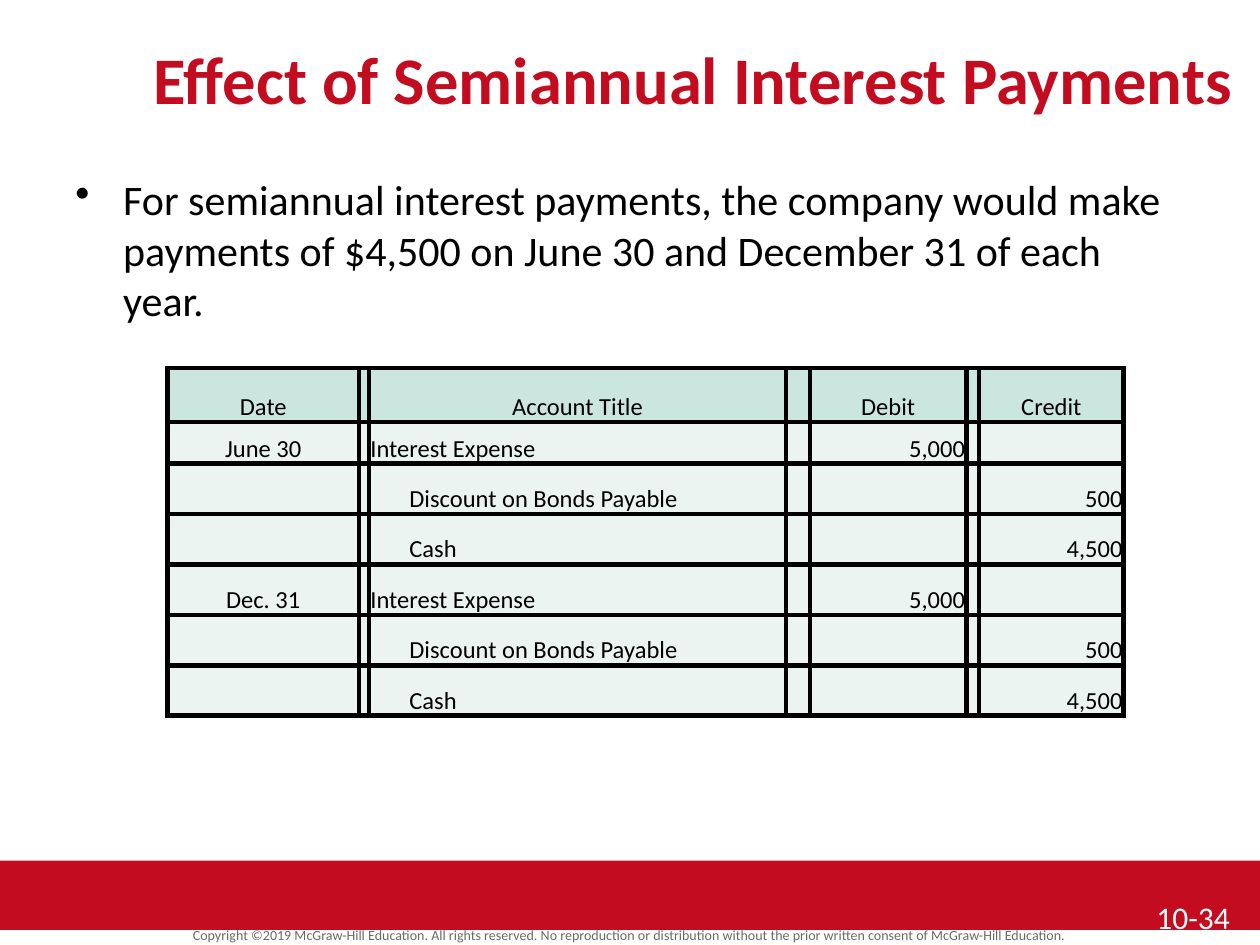
from lxml import etree
from pptx import Presentation, util as u
from pptx.dml.color import RGBColor
from pptx.enum import shapes, text
from pptx.oxml.ns import qn

RED, BLACK, WHITE, GRAY = "C30C20", "000000", "FFFFFF", "6A6A6A"
HEAD, BODY = "CAE6DE", "ECF4F1"
LEFT, MID, RIGHT = text.PP_ALIGN.LEFT, text.PP_ALIGN.CENTER, text.PP_ALIGN.RIGHT
COLS = [1.52, 0.08, 3.31, 0.19, 1.24, 0.1, 1.15]
ROWS = [0.43, 0.33] + [0.4] * 5
ALIGNS = [MID, LEFT, LEFT, LEFT, RIGHT, LEFT, RIGHT]


def color(code):
    return RGBColor.from_string(code)


def style(para, size, code, align=LEFT, bold=False):
    para.alignment = align
    font = para.font
    font.name, font.size, font.bold = "Calibri", u.Pt(size), bold
    font.color.rgb = color(code)


def label(slide, box, words, size, code, align=LEFT, bold=False):
    frame = slide.shapes.add_textbox(*map(u.Inches, box)).text_frame
    frame.word_wrap = True
    para = frame.paragraphs[0]
    para.text = words
    style(para, size, code, align, bold)
    return frame


def bullet(slide, box, words):
    para = label(slide, box, words, 24, BLACK).paragraphs[0]
    para.space_after = u.Pt(8)
    props = para._p.get_or_add_pPr()
    props.set("marL", str(u.Inches(0.38)))
    props.set("indent", str(u.Inches(-0.38)))
    mark = etree.Element(qn("a:buChar"), char="•")
    props.find(qn("a:defRPr")).addprevious(mark)


def footer(slide, box, note, page):
    left, top, width, height = box
    bar = slide.shapes.add_shape(shapes.MSO_SHAPE.RECTANGLE, *map(u.Inches, box))
    bar.shadow.inherit = False
    bar.fill.solid()
    bar.fill.fore_color.rgb = color(RED)
    bar.line.fill.background()
    frame = label(slide, (left, top + 0.51, width, 0.19), note, 8, GRAY, MID)
    frame.vertical_anchor = text.MSO_ANCHOR.MIDDLE
    frame.paragraphs[0].line_spacing = 0.8
    label(slide, (left + width - 0.92, top + 0.25, 0.92, 0.42), page, 18, WHITE)


def border(cell):
    props = cell._tc.get_or_add_tcPr()
    for spot, side in enumerate(("lnL", "lnR", "lnT", "lnB")):
        line = etree.Element(qn(f"a:{side}"), w=str(u.Pt(3)))
        fill = etree.SubElement(line, qn("a:solidFill"))
        etree.SubElement(fill, qn("a:srgbClr"), val=BLACK)
        props.insert(spot, line)


def paint(cell, words, align, back, inset):
    cell.margin_left = cell.margin_right = cell.margin_top = u.Inches(0.01)
    cell.margin_bottom = 0
    cell.vertical_anchor = text.MSO_ANCHOR.BOTTOM
    cell.fill.solid()
    cell.fill.fore_color.rgb = color(back)
    border(cell)
    para = cell.text_frame.paragraphs[0]
    para.text = words
    style(para, 14, BLACK, align)
    if inset:
        para._p.get_or_add_pPr().set("marL", str(u.Inches(inset)))


def journal(slide, box, rows):
    frame = slide.shapes.add_table(len(ROWS), len(COLS), *map(u.Inches, box))
    table = frame.table
    for col, width in zip(table.columns, COLS):
        col.width = u.Inches(width)
    for r, (row, height) in enumerate(zip(rows, ROWS)):
        table.rows[r].height = u.Inches(height)
        date, title, debit, credit = row
        for c, words in enumerate((date, "", title, "", debit, "", credit)):
            align = ALIGNS[c] if r else MID
            inset = 0.31 if c == 2 and not date else 0
            paint(table.cell(r, c), words, align, BODY if r else HEAD, inset)


def entry(date):
    return [
        (date, "Interest Expense", "5,000", ""),
        ("", "Discount on Bonds Payable", "", "500"),
        ("", "Cash", "", "4,500"),
    ]


def main():
    deck = Presentation()
    deck.slide_width, deck.slide_height = u.Inches(10), u.Inches(7.5)
    slide = deck.slides.add_slide(deck.slide_layouts[6])
    footer(
        slide, (0, 6.83, 10, 0.55),
        "Copyright ©2019 McGraw-Hill Education. All rights reserved. No reproduction "
        "or distribution without the prior written consent of McGraw-Hill Education.",
        "10-34",
    )
    label(slide, (1, 0.25, 9, 0.67), "Effect of Semiannual Interest Payments",
          38, RED, MID, True)
    bullet(
        slide, (0.5, 1.33, 9, 5.17),
        "For semiannual interest payments, the company would make payments "
        "of $4,500 on June 30 and December 31 of each year.",
    )
    heads = [("Date", "Account Title", "Debit", "Credit")]
    journal(slide, (1.33, 2.92, sum(COLS), sum(ROWS)),
            heads + entry("June 30") + entry("Dec. 31"))
    deck.save("out.pptx")


if __name__ == "__main__":
    main()
